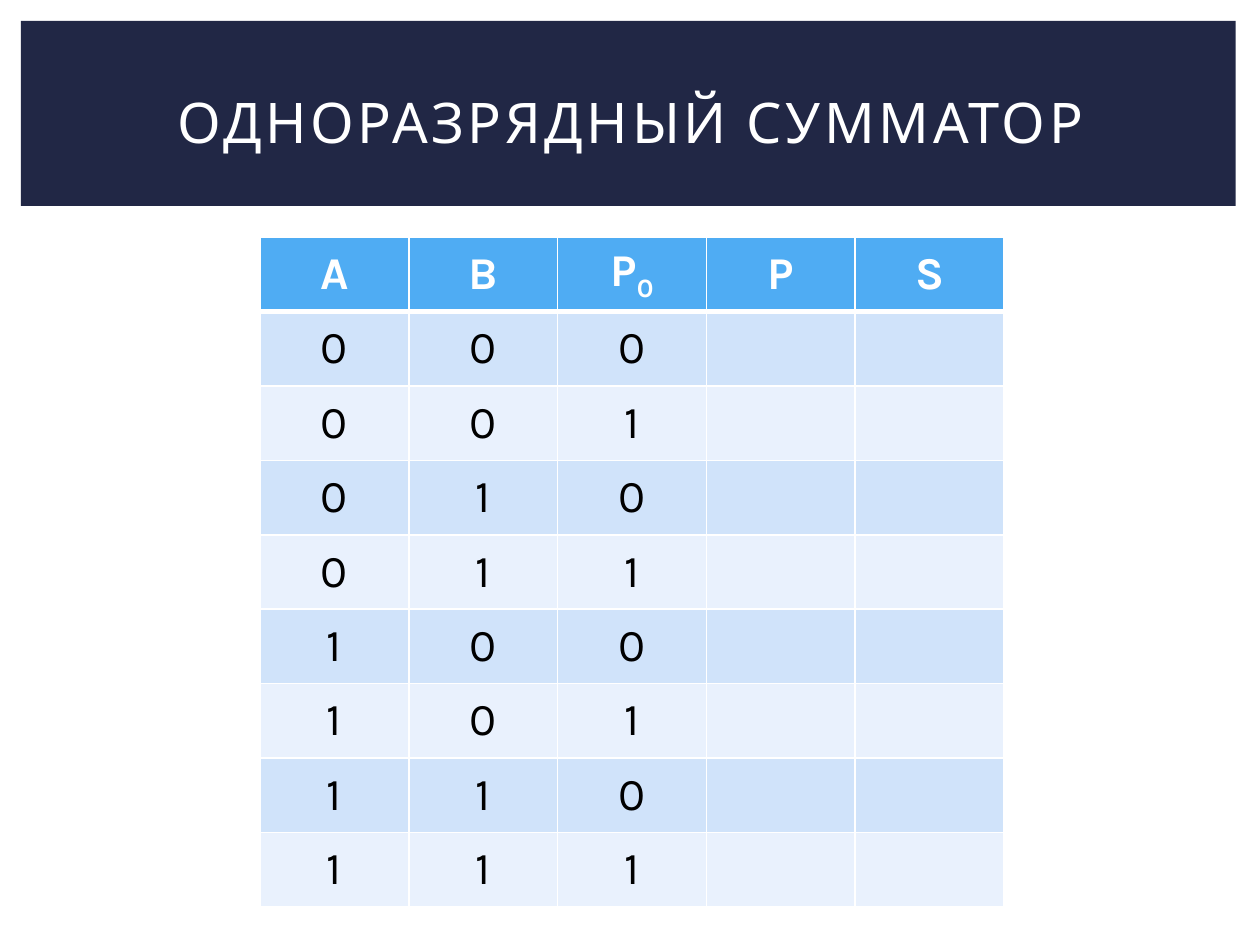
from dataclasses import dataclass
from itertools import product

from lxml.etree import SubElement
from pptx import Presentation
from pptx.dml.color import RGBColor
from pptx.enum.shapes import MSO_SHAPE
from pptx.enum.text import MSO_ANCHOR, PP_ALIGN
from pptx.oxml.ns import qn
from pptx.util import Cm, Pt


@dataclass(frozen=True)
class Theme:
    font: str = "Karla"
    banner: str = "212745"
    header: str = "4FACF3"
    bands: tuple = ("D0E3FA", "E9F1FD")
    light: str = "FFFFFF"
    dark: str = "000000"
    title_size: int = 32
    table_size: int = 26
    thin_line: int = 1
    thick_line: int = 3


THEME = Theme()
HEADERS = ("A", "B", "P0", "P", "S")
ROW_HEIGHT = Cm(1.5)
COLUMN_WIDTH = Cm(3)


def set_attributes(target, values):
    for name, value in values.items():
        setattr(target, name, value)


def add_run(paragraph, text, size, color, bold=False):
    run = paragraph.add_run()
    run.text = text
    set_attributes(run.font, {"name": THEME.font, "size": Pt(size), "bold": bold})
    run.font.color.rgb = RGBColor.from_string(color)
    return run


def add_banner(slide):
    banner = slide.shapes.add_shape(
        MSO_SHAPE.RECTANGLE, Cm(0.42), Cm(0.42), Cm(24.49), Cm(3.73))
    banner.shadow.inherit = False
    banner.fill.solid()
    banner.fill.fore_color.rgb = RGBColor.from_string(THEME.banner)
    banner.line.fill.background()
    # The title placeholder already exists, so the banner goes behind it.
    slide.shapes._spTree.insert(2, banner._element)


def format_title(slide, text):
    title = slide.shapes.title
    set_attributes(title, {"left": Cm(1.07), "top": Cm(0.99),
                           "width": Cm(23.29), "height": Cm(2.92)})
    set_attributes(title.text_frame, {"word_wrap": True,
                                      "vertical_anchor": MSO_ANCHOR.MIDDLE})
    paragraph = title.text_frame.paragraphs[0]
    paragraph.alignment = PP_ALIGN.CENTER
    run = add_run(paragraph, text, THEME.title_size, THEME.light)
    run.font._element.set("spc", "200")


def set_borders(cell, widths):
    """Draw light borders; widths maps an edge letter (L, R, T, B) to points."""
    properties = cell._tc.get_or_add_tcPr()
    for edge, width in widths.items():
        line = SubElement(properties, qn(f"a:ln{edge}"), w=str(Pt(width)))
        fill = SubElement(line, qn("a:solidFill"))
        SubElement(fill, qn("a:srgbClr"), val=THEME.light)


def format_cell(cell, row):
    widths = dict.fromkeys("LRTB", THEME.thin_line)
    if row == 0:
        widths["B"] = THEME.thick_line
    elif row == 1:
        widths["T"] = THEME.thick_line
    set_borders(cell, widths)
    cell.vertical_anchor = MSO_ANCHOR.MIDDLE
    cell.fill.solid()
    color = THEME.bands[(row - 1) % 2] if row else THEME.header
    cell.fill.fore_color.rgb = RGBColor.from_string(color)


def write_cell(cell, text, is_header):
    """Write a centred symbol; any second character becomes a subscript."""
    paragraph = cell.text_frame.paragraphs[0]
    paragraph.alignment = PP_ALIGN.CENTER
    color = THEME.light if is_header else THEME.dark
    for index, character in enumerate(text):
        run = add_run(paragraph, character, THEME.table_size, color, is_header)
        if index:
            run.font._element.set("baseline", "-25000")


def add_truth_table(slide):
    inputs = product("01", repeat=3)
    rows = [HEADERS, *((*values, "", "") for values in inputs)]
    table = slide.shapes.add_table(
        len(rows), len(HEADERS), Cm(5.24), Cm(4.78),
        COLUMN_WIDTH * len(HEADERS), ROW_HEIGHT * len(rows)).table
    for column in table.columns:
        column.width = COLUMN_WIDTH
    for row_index, values in enumerate(rows):
        table.rows[row_index].height = ROW_HEIGHT
        for column_index, text in enumerate(values):
            cell = table.cell(row_index, column_index)
            format_cell(cell, row_index)
            write_cell(cell, text, is_header=row_index == 0)


def main():
    presentation = Presentation()
    set_attributes(presentation, {"slide_width": Cm(25.4), "slide_height": Cm(19.05)})
    slide = presentation.slides.add_slide(presentation.slide_layouts[5])
    add_banner(slide)
    format_title(slide, "ОДНОРАЗРЯДНЫЙ СУММАТОР")
    add_truth_table(slide)
    presentation.save("out.pptx")


if __name__ == "__main__":
    main()
